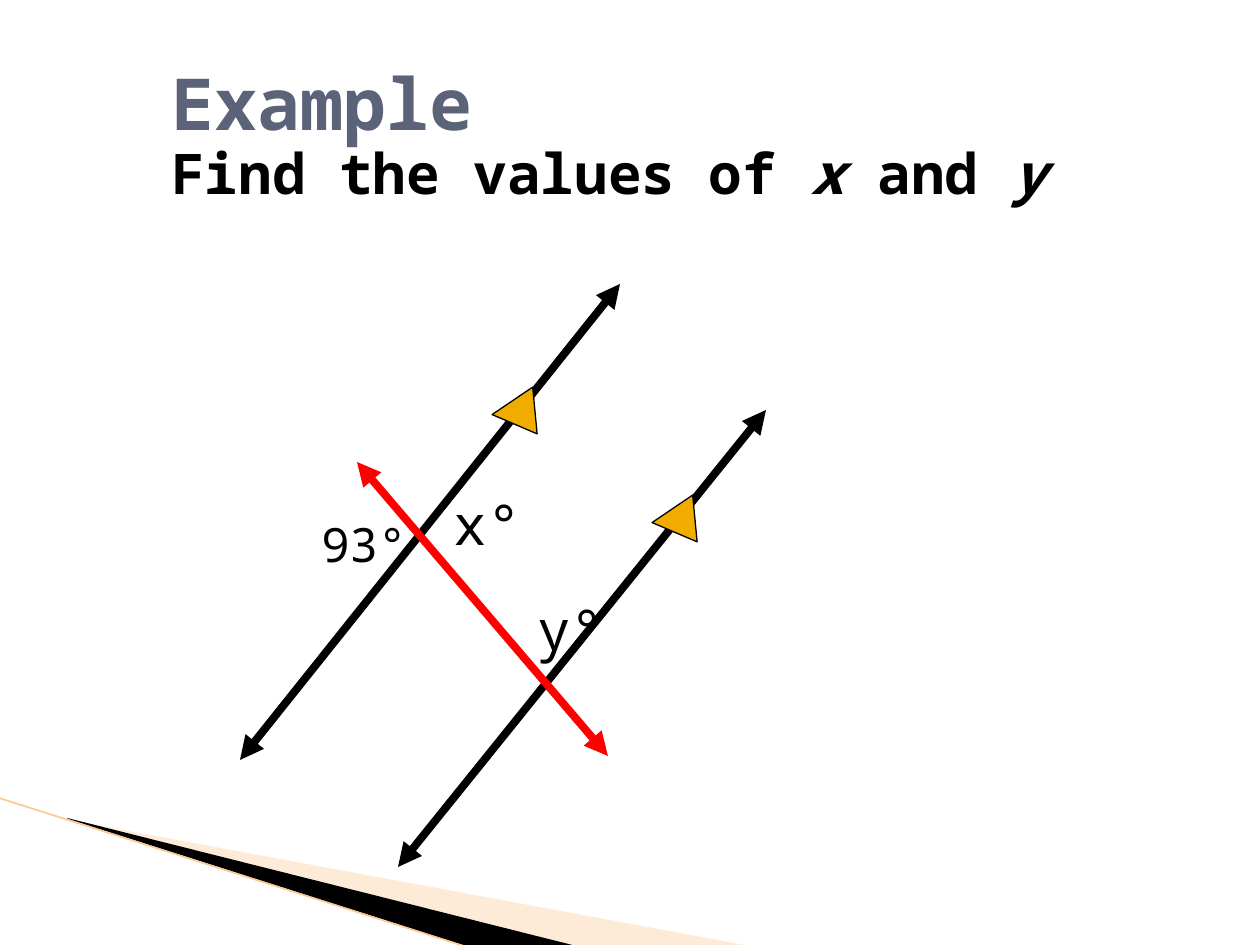
from dataclasses import dataclass
from lxml.etree import SubElement as Sub
from pptx import Presentation
from pptx.dml.color import RGBColor as Rgb
from pptx.enum.shapes import MSO_CONNECTOR as Link, MSO_SHAPE as Kind
from pptx.enum.text import MSO_ANCHOR as Anchor
from pptx.oxml.ns import qn
from pptx.util import Pt

SCALE = 914400 / 126


@dataclass(frozen=True)
class Theme:
    font: str = "Noto Sans Mono"
    ink: str = "000000"
    head: str = "5A6378"
    cross: str = "FF0000"
    mark: str = "F0AD00"
    peach: str = "FCCF9B"
    edge: str = "F9CB92"
    title: int = 41
    body: int = 32
    small: int = 27


THEME = Theme()


def px(*nums):
    return [round(n * SCALE) for n in nums]


def style(run, size, color=THEME.ink, bold=False, slant=False):
    font = run.font
    font.name, font.size = THEME.font, Pt(size)
    font.bold, font.italic = bold, slant
    font.color.rgb = Rgb.from_string(color)


def paint(shape, color):
    shape.shadow.inherit = False
    shape.fill.solid()
    shape.fill.fore_color.rgb = Rgb.from_string(color)


def wedge(slide, points, color, alpha=100):
    path = slide.shapes.build_freeform(*points[0], scale=SCALE)
    path.add_line_segments(points[1:], close=True)
    shape = path.convert_to_shape()
    paint(shape, color)
    shape.line.fill.background()
    if alpha < 100:
        tone = shape.fill._xPr.find(qn("a:solidFill"))[0]
        Sub(tone, qn("a:alpha"), val=str(alpha * 1000))


def line(slide, start, end, color, width=4.5, heads=True):
    link = slide.shapes.add_connector(Link.STRAIGHT, *px(*start, *end))
    link.line.color.rgb = Rgb.from_string(color)
    link.line.width = Pt(width)
    if heads:
        for tag in ("a:headEnd", "a:tailEnd"):
            Sub(link.line._get_or_add_ln(), qn(tag), type="triangle")
    Sub(link._element.spPr, qn("a:effectLst"))


def marker(slide, left, top):
    shape = slide.shapes.add_shape(Kind.ISOSCELES_TRIANGLE, *px(left, top, 47, 43))
    shape.rotation = 264.6
    paint(shape, THEME.mark)
    shape.line.color.rgb = Rgb.from_string(THEME.ink)
    shape.line.width = Pt(0.75)


def box(slide, area):
    frame = slide.shapes.add_textbox(*px(*area)).text_frame
    frame.word_wrap = True
    return frame


def label(slide, text, area, size, left, hang):
    para = box(slide, area).paragraphs[0]
    para.text = text
    props = para._p.get_or_add_pPr()
    props.set("marL", str(px(left)[0]))
    props.set("indent", str(-px(hang)[0]))
    style(para.runs[0], size)


def title(slide):
    frame = box(slide, (159, 32, 1074, 212))
    frame.vertical_anchor = Anchor.MIDDLE
    para = frame.paragraphs[0]
    para.line_spacing = 0.9
    para.text = "Example\v"
    style(para.runs[0], THEME.title, THEME.head, True)
    for text in ("Find the values of ", "x", " and ", "y"):
        run = para.add_run()
        run.text = text
        style(run, THEME.body, bold=True, slant=text in "xy")


def main():
    deck = Presentation()
    deck.slide_width, deck.slide_height = px(1260, 945)
    slide = deck.slides.add_slide(deck.slide_layouts[6])
    wedge(slide, [(69, 820), (750, 946), (575, 946), (69, 819)], THEME.peach, 40)
    wedge(slide, [(67, 818), (576, 946), (469, 947), (68, 819)], THEME.ink)
    line(slide, (-1, 798), (467, 947), THEME.edge, 0.95, False)
    label(slide, "93°", (294, 509, 152, 100), THEME.small, 50, 35)
    title(slide)
    line(slide, (240, 760), (620, 284), THEME.ink)
    line(slide, (398, 867), (766, 410), THEME.ink)
    line(slide, (357, 462), (608, 756), THEME.cross)
    for spot in ((490, 391), (650, 499)):
        marker(slide, *spot)
    for text, left, top in (("x°", 441, 483), ("y°", 525, 588)):
        label(slide, text, (left, top, 110, 84), THEME.body, 48, 48)
    deck.save("out.pptx")


if __name__ == "__main__":
    main()
